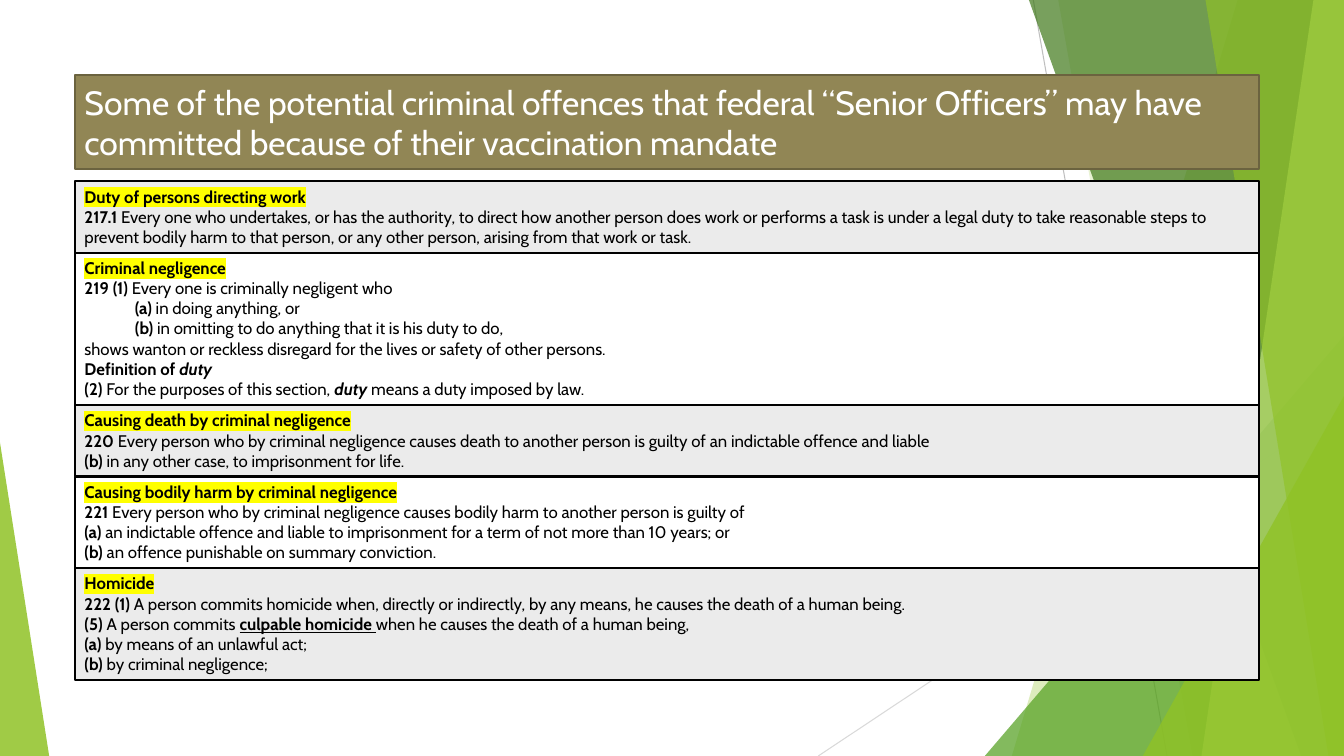
from lxml import etree
from pptx import Presentation
from pptx.dml.color import RGBColor
from pptx.enum import shapes, text
from pptx.oxml import ns
from pptx.util import Cm, Pt

COLORS = {
    "white": "FFFFFF", "black": "000000", "gray": "EBEBEB", "yellow": "FFFF00",
    "olive": "918655", "olive edge": "6B633F", "lime": "90C226", "pale": "C0E474",
    "green": "54A021", "forest": "3F7819", "ray": "BFBFBF", "light ray": "D9D9D9",
}
WIDTH, HEIGHT = 33.87, 19.05
LEFT, PANEL_WIDTH = 1.88, 29.85
LINE_HEIGHT, PADDING = 0.51, 0.27


def paint(shape, fill, alpha=100, edge=None):
    shape.shadow.inherit = False
    shape.fill.solid()
    shape.fill.fore_color.rgb = RGBColor.from_string(COLORS[fill])
    if alpha < 100:
        color = shape.fill._xPr.find(".//" + ns.qn("a:srgbClr"))
        etree.SubElement(color, ns.qn("a:alpha"), val=str(alpha * 1000))
    if edge:
        shape.line.color.rgb = RGBColor.from_string(COLORS[edge])
        shape.line.width = Pt(1.5)
    else:
        shape.line.fill.background()


def write(paragraph, runs, size, color, highlight=None):
    paragraph.alignment = text.PP_ALIGN.LEFT
    for words, style in runs:
        run = paragraph.add_run()
        run.text = words
        formats = {"name": "Cabin", "size": Pt(size), "bold": "b" in style,
                   "italic": "i" in style, "underline": "u" in style}
        for name, value in formats.items():
            setattr(run.font, name, value)
        run.font.color.rgb = RGBColor.from_string(COLORS[color])
        if highlight:
            mark = etree.Element(ns.qn("a:highlight"))
            etree.SubElement(mark, ns.qn("a:srgbClr"), val=COLORS[highlight])
            run.font._element.find(ns.qn("a:solidFill")).addnext(mark)


presentation = Presentation()
presentation.slide_width, presentation.slide_height = Cm(WIDTH), Cm(HEIGHT)
slide = presentation.slides.add_slide(presentation.slide_layouts[6])

# Thin rays
for x1, y1, x2, y2, color in [(26.04, 0, 29.41, HEIGHT, "ray"),
                              (WIDTH, 10.24, 20.62, HEIGHT, "light ray")]:
    ray = slide.shapes.add_connector(
        shapes.MSO_CONNECTOR.STRAIGHT, Cm(x1), Cm(y1), Cm(x2), Cm(y2))
    ray.line.color.rgb = RGBColor.from_string(COLORS[color])
    ray.line.width = Pt(0.75)
    etree.SubElement(ray._element.spPr, ns.qn("a:effectLst"))

# Green facets: bands (top x, bottom x) and triangles (left, top, width, apex)
facets = [
    ("band", (31.19, 25.5), "lime", 30),
    ("band", (26.67, 30.05), "lime", 20),
    ("triangle", (24.82, 8.46, 9.05, 1), "green", 72),
    ("band", (25.93, 32.79), "forest", 70),
    ("band", (33.1, 30.28), "pale", 70),
    ("band", (30.38, 33.48), "lime", 65),
    ("triangle", (28.8, 9.98, 5.07, 1), "lime", 80),
    ("triangle", (0, 11.15, 1.24, 0), "lime", 85),
]
for kind, geometry, color, alpha in facets:
    if kind == "band":
        top_x, bottom_x = geometry
        builder = slide.shapes.build_freeform(Cm(top_x), 0)
        builder.add_line_segments([(Cm(WIDTH), 0), (Cm(WIDTH), Cm(HEIGHT)),
                                   (Cm(bottom_x), Cm(HEIGHT))], close=True)
        facet = builder.convert_to_shape()
    else:
        left, top, width, apex = geometry
        facet = slide.shapes.add_shape(
            shapes.MSO_SHAPE.ISOSCELES_TRIANGLE,
            Cm(left), Cm(top), Cm(width), Cm(HEIGHT - top))
        facet.adjustments[0] = apex
    paint(facet, color, alpha)

# Title
title = slide.shapes.add_shape(
    shapes.MSO_SHAPE.RECTANGLE, Cm(LEFT), Cm(1.9), Cm(PANEL_WIDTH), Cm(2.36))
paint(title, "olive", edge="olive edge")
title.text_frame.word_wrap = True
title.text_frame.vertical_anchor = text.MSO_ANCHOR.MIDDLE
write(title.text_frame.paragraphs[0],
      [("Some of the potential criminal offences that federal “Senior Officers” may have "
        "committed because of their vaccination mandate", "")], 24, "white")

# Offences: heading, number of text lines, paragraphs of (words, style) runs
offences = [
    ("Duty of persons directing work", 3, [
        [("217.1", "b"),
         (" Every one who undertakes, or has the authority, to direct how another person does "
          "work or performs a task is under a legal duty to take reasonable steps to prevent "
          "bodily harm to that person, or any other person, arising from that work or task.",
          "")]]),
    ("Criminal negligence", 7, [
        [("219 (1)", "b"), (" Every one is criminally negligent who", "")],
        [("(a)", "b indent"), (" in doing anything, or", "")],
        [("(b)", "b indent"), (" in omitting to do anything that it is his duty to do,", "")],
        [("shows wanton or reckless disregard for the lives or safety of other persons.", "")],
        [("Definition of ", "b"), ("duty", "bi")],
        [("(2)", "b"), (" For the purposes of this section, ", ""), ("duty", "bi"),
         (" means a duty imposed by law.", "")]]),
    ("Causing death by criminal negligence", 3, [
        [("220", "b"),
         (" Every person who by criminal negligence causes death to another person is guilty "
          "of an indictable offence and liable", "")],
        [("(b)", "b"), (" in any other case, to imprisonment for life.", "")]]),
    ("Causing bodily harm by criminal negligence", 4, [
        [("221", "b"),
         (" Every person who by criminal negligence causes bodily harm to another person is "
          "guilty of", "")],
        [("(a)", "b"),
         (" an indictable offence and liable to imprisonment for a term of not more than "
          "10 years; or", "")],
        [("(b)", "b"), (" an offence punishable on summary conviction.", "")]]),
    ("Homicide", 5, [
        [("222 (1)", "b"),
         (" A person commits homicide when, directly or indirectly, by any means, he causes "
          "the death of a human being.", "")],
        [("(5)", "b"), (" A person commits ", ""), ("culpable homicide ", "bu"),
         ("when he causes the death of a human being,", "")],
        [("(a)", "b"), (" by means of an unlawful act;", "")],
        [("(b)", "b"), (" by criminal negligence;", "")]]),
]
top = 4.57
for index, (heading, line_count, body) in enumerate(offences):
    height = line_count * LINE_HEIGHT + PADDING
    panel = slide.shapes.add_shape(
        shapes.MSO_SHAPE.RECTANGLE, Cm(LEFT), Cm(top), Cm(PANEL_WIDTH), Cm(height))
    paint(panel, ("gray", "white")[index % 2], edge="black")
    frame = panel.text_frame
    frame.word_wrap = True
    frame.auto_size = text.MSO_AUTO_SIZE.SHAPE_TO_FIT_TEXT
    frame.vertical_anchor = text.MSO_ANCHOR.TOP
    write(frame.paragraphs[0], [(heading, "b")], 12, "black", "yellow")
    for runs in body:
        paragraph = frame.add_paragraph()
        if "indent" in runs[0][1]:
            paragraph._p.get_or_add_pPr().set("marL", str(Cm(1.27)))
            runs = [(words, style.replace(" indent", "")) for words, style in runs]
        write(paragraph, runs, 12, "black")
    top += height

presentation.save("out.pptx")
